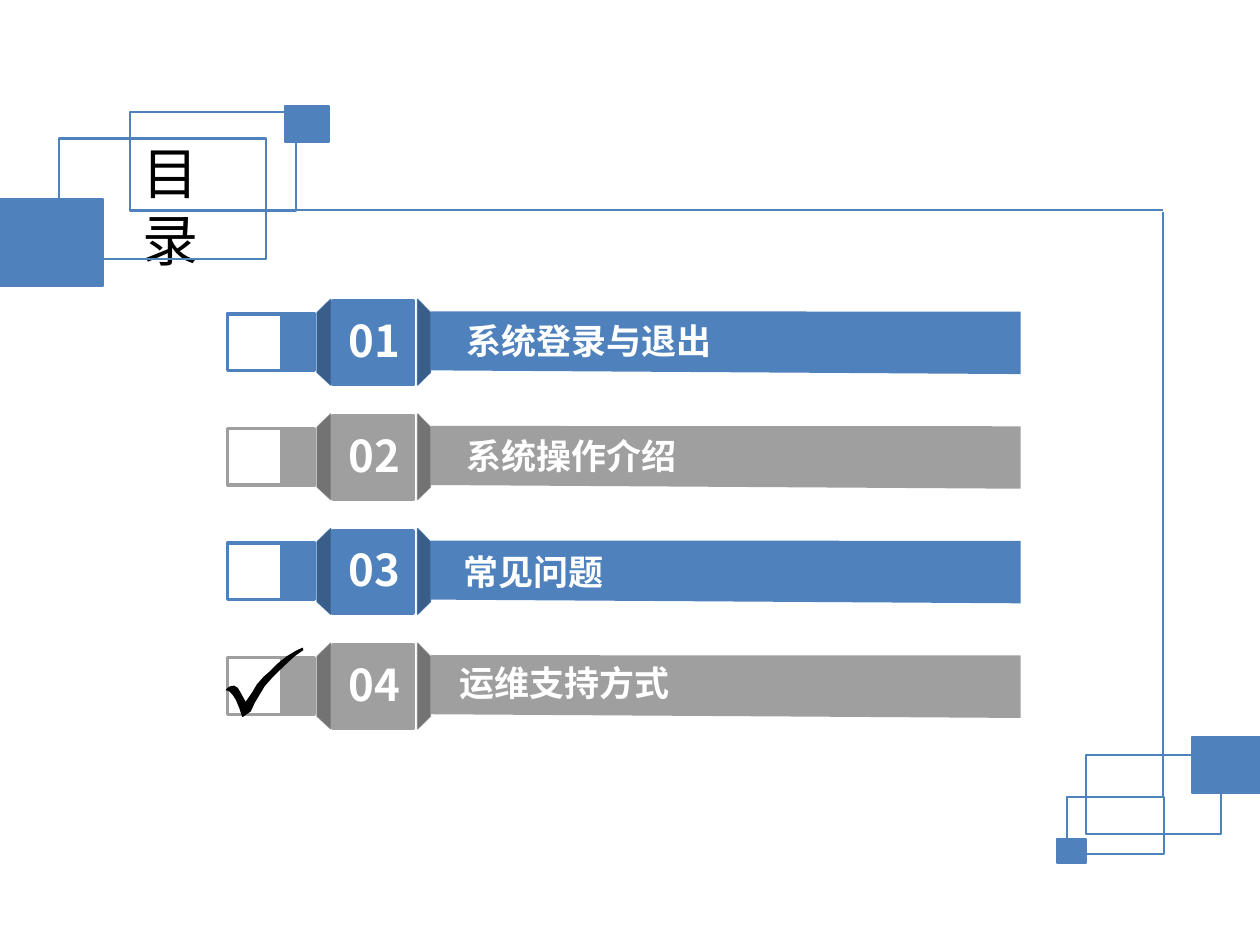
from lxml import etree
from pptx import Presentation
from pptx.dml.color import RGBColor
from pptx.enum.shapes import MSO_CONNECTOR, MSO_SHAPE
from pptx.enum.text import MSO_ANCHOR, MSO_AUTO_SIZE, PP_ALIGN
from pptx.oxml.ns import qn
from pptx.util import Pt

RECTANGLE = MSO_SHAPE.RECTANGLE
STRAIGHT = MSO_CONNECTOR.STRAIGHT
TOP, MIDDLE = MSO_ANCHOR.TOP, MSO_ANCHOR.MIDDLE
LEFT, CENTER = PP_ALIGN.LEFT, PP_ALIGN.CENTER
NO_AUTOFIT = MSO_AUTO_SIZE.NONE

BLUE, GRAY, BLACK, WHITE = "4F81BD", "9F9F9F", "000000", "FFFFFF"
TITLE_FONT, NUMBER_FONT = "Arial", "Noto Sans CJK SC"
TITLE_LINE = 1.25

# Number, label, colour, and the label's own left and top within the row
ROWS = [
    ("01", "系统登录与退出", BLUE, 129.2, -0.7),
    ("02", "系统操作介绍", GRAY, 129.2, 0),
    ("03", "常见问题", BLUE, 127.8, 0.7),
    ("04", "运维支持方式", GRAY, 125.6, -1.4),
]
ROW_LEFT, ROW_TOP, ROW_PITCH = 130, 179.3, 65.5

TICK = [
    (44, 0), (44.5, 1.5), (39.5, 5), (33, 11), (26.5, 17.5), (22.5, 22),
    (19.5, 27), (16.5, 32), (14.5, 36.5), (10, 39.6), (9.5, 39.6),
    (8, 35), (6, 30), (4, 27), (2, 25), (0, 24.3), (1.3, 23),
    (3, 22), (5, 21.8), (7, 23), (8.5, 25.5), (11.5, 31), (15, 26),
    (18, 21), (21.5, 17), (26, 13), (30, 9), (35, 5), (40, 2),
]


def color(hex_string):
    return RGBColor.from_string(hex_string)


def paint(shape, fill, line, width):
    shape.shadow.inherit = False
    if fill:
        shape.fill.solid()
        shape.fill.fore_color.rgb = color(fill)
    else:
        shape.fill.background()
    if line:
        shape.line.color.rgb = color(line)
        shape.line.width = Pt(width)
    else:
        shape.line.fill.background()


def add_rectangle(page, box, fill, line, width):
    shape = page.shapes.add_shape(RECTANGLE, *[Pt(value) for value in box])
    paint(shape, fill, line, width)


def add_outline(page, left, top, points, fill, line=None, width=0):
    corners = [(Pt(left + x), Pt(top + y)) for x, y in points]
    builder = page.shapes.build_freeform(*corners[0])
    builder.add_line_segments(corners[1:], close=True)
    shape = builder.convert_to_shape()
    paint(shape, fill, line, width)
    return shape


def set_alpha(shape, percent):
    tint = shape.fill._xPr.find(qn("a:solidFill"))[0]
    etree.SubElement(tint, qn("a:alpha")).set("val", str(percent * 1000))


def write(shape, text, size, font, hex_string, bold, align, anchor, wrap):
    frame = shape.text_frame
    frame.auto_size = NO_AUTOFIT
    frame.word_wrap = wrap
    frame.vertical_anchor = anchor
    para = frame.paragraphs[0]
    para.alignment = align
    span = para.add_run()
    span.text = text
    span.font.size = Pt(size)
    span.font.name = font
    span.font.bold = bold
    span.font.color.rgb = color(hex_string)


def add_label(page, box, text, size, font, align, anchor):
    shape = page.shapes.add_textbox(*[Pt(value) for value in box])
    write(shape, text, size, font, WHITE, True, align, anchor, False)


def add_fold(page, left, top, inner, outer, tone):
    points = [(inner, -8.3), (outer, -0.7), (outer, 33.5), (inner, 40.7)]
    add_outline(page, left, top, points, tone, tone, 0.75)
    set_alpha(add_outline(page, left, top, points, BLACK), 27)


def add_row(page, left, top, number, text, tone, label_left, label_top):
    # Check box and its strap
    add_rectangle(page, (left, top, 31, 32.4), None, tone, 2)
    add_rectangle(page, (left + 31, top, 18.7, 32.4), tone, tone, 2)
    # Number block between two folds
    add_fold(page, left, top, 59, 51.2, tone)
    add_rectangle(page, (left + 60.4, top - 7.2, 46, 47.5), tone, tone, 2)
    add_fold(page, left, top, 108.6, 116, tone)
    add_label(page, (left + 62, top - 3.6, 44, 37.4), number, 25,
              NUMBER_FONT, CENTER, TOP)
    # Bar with its label
    bar = [(116.4, -1.4), (116.4, 32.4), (453.2, 34.5), (453.2, -1.2)]
    add_outline(page, left, top, bar, tone)
    add_label(page, (left + label_left, top + label_top, 157, 31.5), text, 20,
              TITLE_FONT, LEFT, MIDDLE)


def add_boxes(page, left, top, boxes):
    for x, y, width, height, fill in boxes:
        add_rectangle(page, (left + x, top + y, width, height), fill, BLUE, TITLE_LINE)


def add_title(page, left, top):
    add_boxes(page, left, top, [
        (33.8, 18.7, 118, 69, None),
        (0, 53.3, 59, 49.7, BLUE),
        (74.2, 3.6, 95, 56.2, None),
        (162.7, 0, 25.2, 20.9, BLUE),
    ])
    title = page.shapes.title
    title.left, title.top = Pt(left + 74.2), Pt(top + 15.1)
    title.width, title.height = Pt(76.3), Pt(45.4)
    write(title, "目录", 32, TITLE_FONT, BLACK, False, LEFT, TOP, True)


def add_corner(page, left, top):
    add_boxes(page, left, top, [
        (16.6, 10.3, 77, 45.4, None),
        (77.1, 0, 38.9, 32.4, BLUE),
        (5.8, 34.6, 55.4, 32.4, None),
        (0, 58.3, 16.6, 13.7, BLUE),
    ])


def add_rule(page, *ends):
    rule = page.shapes.add_connector(STRAIGHT, *[Pt(value) for value in ends])
    rule.line.color.rgb = color(BLUE)
    rule.line.width = Pt(TITLE_LINE)
    etree.SubElement(rule._element.spPr, qn("a:effectLst"))


def main():
    deck = Presentation()
    deck.slide_width, deck.slide_height = Pt(720), Pt(540)
    page = deck.slides.add_slide(deck.slide_layouts[5])

    # Frame: title, closing corner and the rules joining them
    add_title(page, 0, 60.5)
    add_corner(page, 604, 421)
    add_rule(page, 168.5, 120.2, 664.6, 120.2)
    add_rule(page, 664.6, 121, 664.6, 455.8)

    # Contents
    for index, row in enumerate(ROWS):
        add_row(page, ROW_LEFT, ROW_TOP + index * ROW_PITCH, *row)

    # Tick on the current section
    add_outline(page, 128.9, 370, TICK, BLACK)

    deck.save("out.pptx")


if __name__ == "__main__":
    main()
